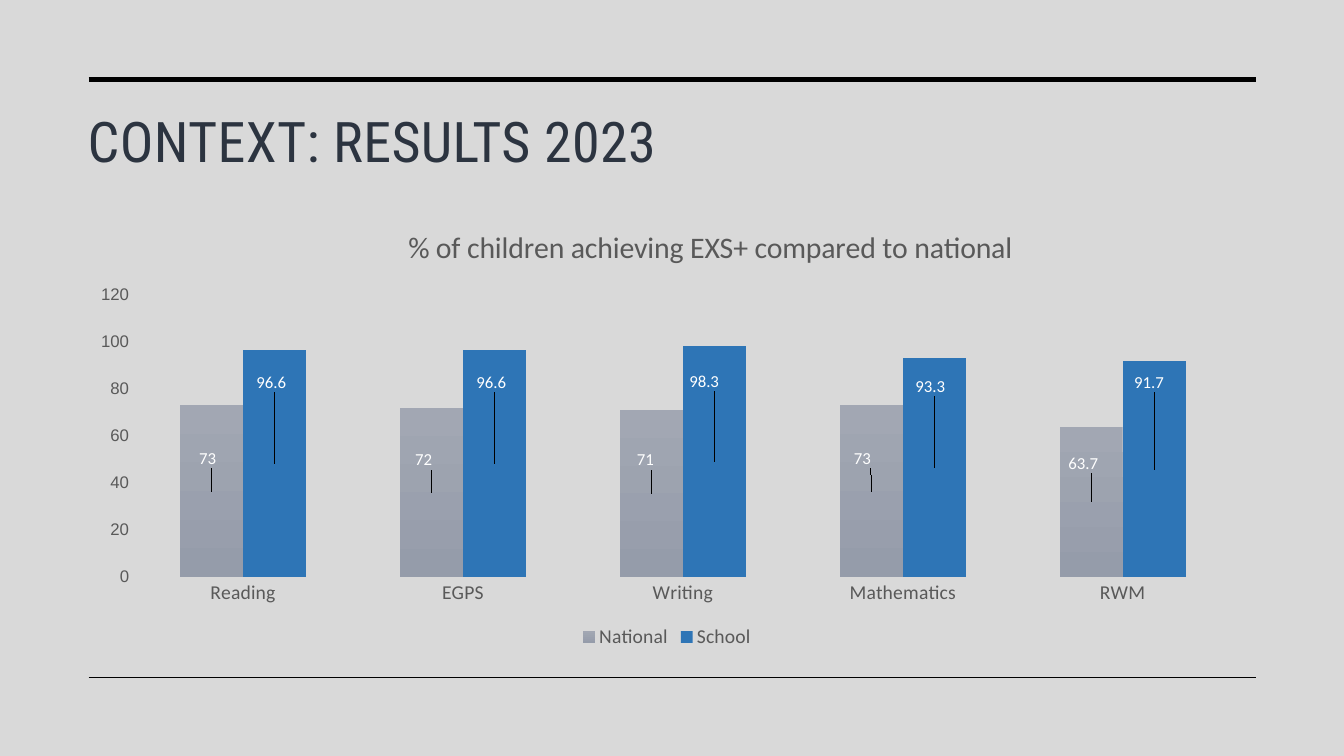
"""Build the 2023 results slide: a title between rules and a column chart."""
import pptx
import pptx.chart.data
import pptx.dml.color
import pptx.enum.chart
import pptx.enum.shapes
import pptx.enum.text
import pptx.oxml
import pptx.oxml.ns
import pptx.util

Inches, Pt = pptx.util.Inches, pptx.util.Pt
enum = pptx.enum.chart

TITLE = "CONTEXT: RESULTS 2023"
HEAD = "% of children achieving EXS+ compared to national"
CATS = ["Reading", "EGPS", "Writing", "Mathematics", "RWM"]
DATA = {
    "National": [73, 72, 71, 73, 63.7],
    "School": [96.6, 96.6, 98.3, 93.3, 91.7],
}
SHIFTS = {
    "National": [(-0.04, -0.32), (-0.08, -0.32), (-0.06, -0.33), (-0.09, -0.32), (-0.08, -0.38)],
    "School": [(-0.03, -0.8), (-0.03, -0.8), (-0.1, -0.79), (-0.04, -0.8), (-0.05, -0.86)],
}
RULES = [(0.79, 3.5), (6.72, 1)]
COLORS = {
    "back": "D9D9D9", "rule": "000000", "title": "2C3440", "text": "595959",
    "base": "1C1C32", "label": "FFFFFF", "top": "A2A7B3", "foot": "959CAA",
    "school": "2E75B6",
}
LEFT, WIDE, HIGH = 0.77, 11.69, 4.42


def tint(name):
    return pptx.dml.color.RGBColor.from_string(COLORS[name])


def apply(item, **values):
    for key, value in values.items():
        setattr(item, key, value)


def style(font, name, size, color):
    apply(font, name=name, size=Pt(size), bold=False)
    font.color.rgb = tint(color)


def stroke(line, color, width):
    line.color.rgb = tint(color)
    line.width = Pt(width)


def place(parent, index, **values):
    """Give a chart part a manual layout."""
    tag = pptx.oxml.ns.qn("c:layout")
    for old in parent.findall(tag):
        parent.remove(old)
    parts = "".join(f'<c:{key} val="{value}"/>' for key, value in values.items())
    space = pptx.oxml.ns.nsdecls("c")
    xml = f"<c:layout {space}><c:manualLayout>{parts}</c:manualLayout></c:layout>"
    parent.insert(index, pptx.oxml.parse_xml(xml))


def add_rules(slide):
    for top, width in RULES:
        rule = slide.shapes.add_connector(
            pptx.enum.shapes.MSO_CONNECTOR.STRAIGHT,
            Inches(0.88), Inches(top), Inches(12.46), Inches(top))
        stroke(rule.line, "rule", width)
        space = pptx.oxml.ns.nsdecls("a")
        rule._element.spPr.append(pptx.oxml.parse_xml(f"<a:effectLst {space}/>"))


def add_title(slide):
    title = slide.shapes.title
    apply(title, left=Inches(LEFT), top=Inches(1.01), width=Inches(WIDE), height=Inches(1.5))
    frame = title.text_frame
    apply(frame, text=TITLE, word_wrap=True, vertical_anchor=pptx.enum.text.MSO_ANCHOR.TOP)
    para = frame.paragraphs[0]
    para.alignment = pptx.enum.text.PP_ALIGN.LEFT
    run = para.runs[0]
    style(run.font, "Roboto Condensed", 40, "title")
    run._r.get_or_add_rPr().set("spc", "30")


def add_labels(series):
    spot = enum.XL_LABEL_POSITION.CENTER
    labels = series.data_labels
    apply(labels, show_value=True, position=spot)
    style(labels.font, "Calibri", 12, "label")
    for index in range(len(CATS)):
        label = series.points[index].data_label
        label.position = spot
        style(label.font, "Calibri", 12, "label")
    nodes = series._element.iter(pptx.oxml.ns.qn("c:dLbl"))
    for node, (across, down) in zip(list(nodes), SHIFTS[series.name]):
        place(node, 1, x=round(across / WIDE, 4), y=round(down / HIGH, 4))


def add_chart(slide):
    data = pptx.chart.data.CategoryChartData()
    data.categories = CATS
    for name, values in DATA.items():
        data.add_series(name, values)
    chart = slide.shapes.add_chart(
        enum.XL_CHART_TYPE.COLUMN_CLUSTERED,
        Inches(LEFT), Inches(2.06), Inches(WIDE), Inches(HIGH), data).chart
    style(chart.font, "Arial", 12, "base")

    head = chart.chart_title
    head.text_frame.text = HEAD
    style(head.text_frame.paragraphs[0].runs[0].font, "Calibri", 21.3, "text")
    place(head._element, 1, xMode="edge", yMode="edge", x=0.276, y=0.03)
    area = chart._chartSpace.chart.plotArea
    place(area, 0, layoutTarget="inner", xMode="edge", yMode="edge",
          x=0.047, y=0.196, w=0.933, h=0.633)

    chart.has_legend = True
    apply(chart.legend, position=enum.XL_LEGEND_POSITION.BOTTOM, include_in_layout=False)
    style(chart.legend.font, "Calibri", 14, "text")

    cat, val = chart.category_axis, chart.value_axis
    for axis, face, size in ((cat, "Calibri", 14), (val, "Arial", 12)):
        apply(axis, major_tick_mark=enum.XL_TICK_MARK.NONE,
              minor_tick_mark=enum.XL_TICK_MARK.NONE)
        style(axis.tick_labels.font, face, size, "text")
    stroke(cat.format.line, "back", 1)
    apply(val, minimum_scale=0, maximum_scale=120, major_unit=20)
    val.format.line.fill.background()
    stroke(val.major_gridlines.format.line, "back", 0.75)

    plot = chart.plots[0]
    apply(plot, gap_width=150, overlap=0, vary_by_categories=False)
    nation, school = plot.series
    fill = nation.format.fill
    fill.gradient()
    fill.gradient_angle = 270
    for stop, color, spot in zip(fill.gradient_stops, ("top", "foot"), (0, 1)):
        stop.color.rgb = tint(color)
        stop.position = spot
    school.format.fill.solid()
    school.format.fill.fore_color.rgb = tint("school")
    for series in plot.series:
        series.invert_if_negative = False
        add_labels(series)


def main():
    deck = pptx.Presentation()
    apply(deck, slide_width=Inches(13.33), slide_height=Inches(7.5))
    slide = deck.slides.add_slide(deck.slide_layouts[5])
    slide.background.fill.solid()
    slide.background.fill.fore_color.rgb = tint("back")
    add_rules(slide)
    add_title(slide)
    add_chart(slide)
    deck.save("out.pptx")


if __name__ == "__main__":
    main()
